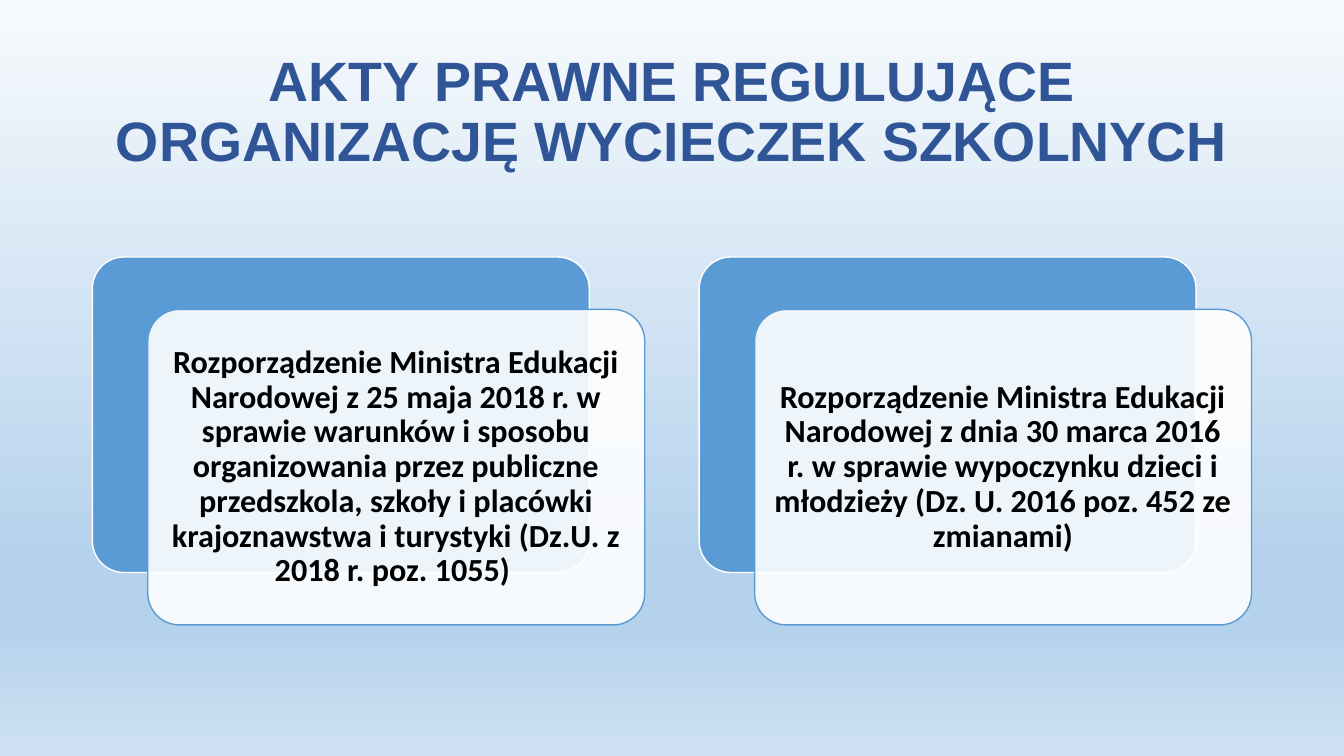
"""Build the slide on the legal acts that govern school trips."""
import lxml.etree
import pptx
import pptx.dml.color
import pptx.enum.shapes
import pptx.enum.text
import pptx.oxml.ns
import pptx.util

TITLE = "AKTY PRAWNE REGULUJĄCE ORGANIZACJĘ WYCIECZEK SZKOLNYCH"
ACTS = [
    "Rozporządzenie Ministra Edukacji Narodowej z 25 maja 2018 r. w sprawie warunków i sposobu "
    "organizowania przez publiczne przedszkola, szkoły i placówki krajoznawstwa i turystyki "
    "(Dz.U. z 2018 r. poz. 1055) ",
    "Rozporządzenie Ministra Edukacji Narodowej z dnia 30 marca 2016 r. w sprawie wypoczynku "
    "dzieci i młodzieży (Dz. U. 2016 poz. 452 ze zmianami)",
]
THEME = {
    "background": [(0, "F7FAFD"), (74, "B5D2EC"), (83, "B5D2EC"), (100, "CEE1F2")],
    "accent": "5B9BD5",
    "white": "FFFFFF",
    "card_opacity": 90,
    "title": {"name": "Arial", "size": 39.6, "bold": True, "color": "2F5597"},
    "act": {"name": "Calibri", "size": 23, "bold": True, "color": "000000"},
}
SLIDE_W, SLIDE_H = 960, 540
TITLE_BOX = (66, 28.8, 828, 104.4)
CARD_W, CARD_H = 354.96, 225.36
LEFT, TOP, PITCH = 66, 183.6, 433.44
OFFSET_X, OFFSET_Y = 39.6, 37.44
CARD_INSET = 6.9

Pt = pptx.util.Pt
qn = pptx.oxml.ns.qn
rgb = pptx.dml.color.RGBColor.from_string


def paint_background(s):
    """Fill the background with the vertical theme gradient."""
    fill = s.background.fill
    fill.gradient()
    fill.gradient_angle = 270
    stops = next(s.element.iter(qn("a:gsLst")))
    for stop in list(stops):
        stops.remove(stop)
    for position, color in THEME["background"]:
        stop = lxml.etree.SubElement(stops, qn("a:gs"), pos=str(position * 1000))
        lxml.etree.SubElement(stop, qn("a:srgbClr"), val=color)


def write(sp, text, style, inset=None):
    """Write one centred paragraph in the given type style."""
    tf = sp.text_frame
    frame = {"word_wrap": True, "vertical_anchor": pptx.enum.text.MSO_ANCHOR.MIDDLE}
    if inset is not None:
        sides = ("left", "top", "right", "bottom")
        frame.update({f"margin_{side}": Pt(inset) for side in sides})
    for key, value in frame.items():
        setattr(tf, key, value)
    p = tf.paragraphs[0]
    p.alignment = pptx.enum.text.PP_ALIGN.CENTER
    p.line_spacing = 0.9
    r = p.add_run()
    r.text = text
    for key, value in {**style, "size": Pt(style["size"])}.items():
        if key == "color":
            r.font.color.rgb = rgb(value)
        else:
            setattr(r.font, key, value)


def add_card(s, x, y, fill, line):
    """Add one rounded card."""
    kind = pptx.enum.shapes.MSO_SHAPE.ROUNDED_RECTANGLE
    sp = s.shapes.add_shape(kind, Pt(x), Pt(y), Pt(CARD_W), Pt(CARD_H))
    sp.adjustments[0] = 0.1
    sp.shadow.inherit = False
    sp.fill.solid()
    sp.fill.fore_color.rgb = rgb(fill)
    sp.line.color.rgb = rgb(line)
    sp.line.width = Pt(1)
    return sp


def main():
    """Lay out the title and the cards and save the slide."""
    prs = pptx.Presentation()
    prs.slide_width, prs.slide_height = Pt(SLIDE_W), Pt(SLIDE_H)
    s = prs.slides.add_slide(prs.slide_layouts[6])
    paint_background(s)
    write(s.shapes.add_textbox(*map(Pt, TITLE_BOX)), TITLE, THEME["title"])
    for i, act in enumerate(ACTS):
        x = LEFT + i * PITCH
        add_card(s, x, TOP, THEME["accent"], THEME["white"])
        sp = add_card(s, x + OFFSET_X, TOP + OFFSET_Y, THEME["white"], THEME["accent"])
        color = sp.element.spPr.find(qn("a:solidFill"))[0]
        lxml.etree.SubElement(color, qn("a:alpha"), val=str(THEME["card_opacity"] * 1000))
        write(sp, act, THEME["act"], CARD_INSET)
    prs.save("out.pptx")


if __name__ == "__main__":
    main()
